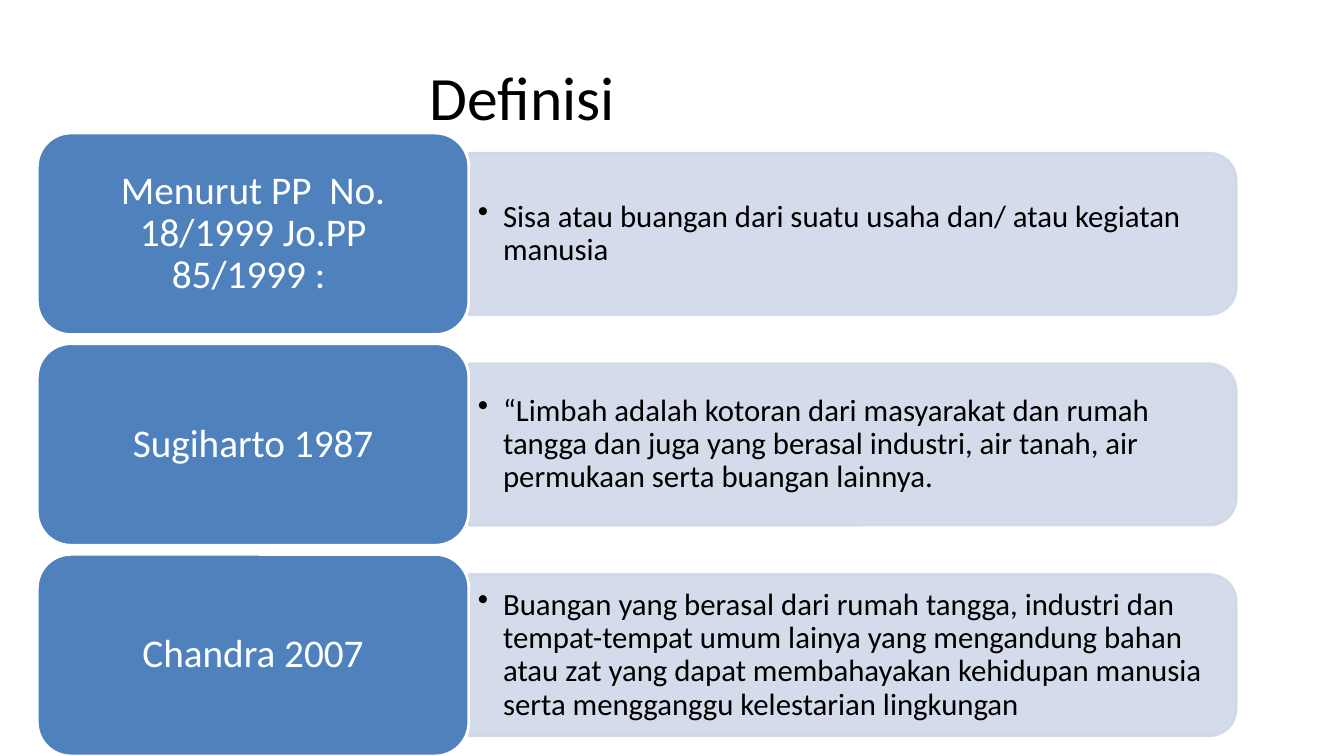
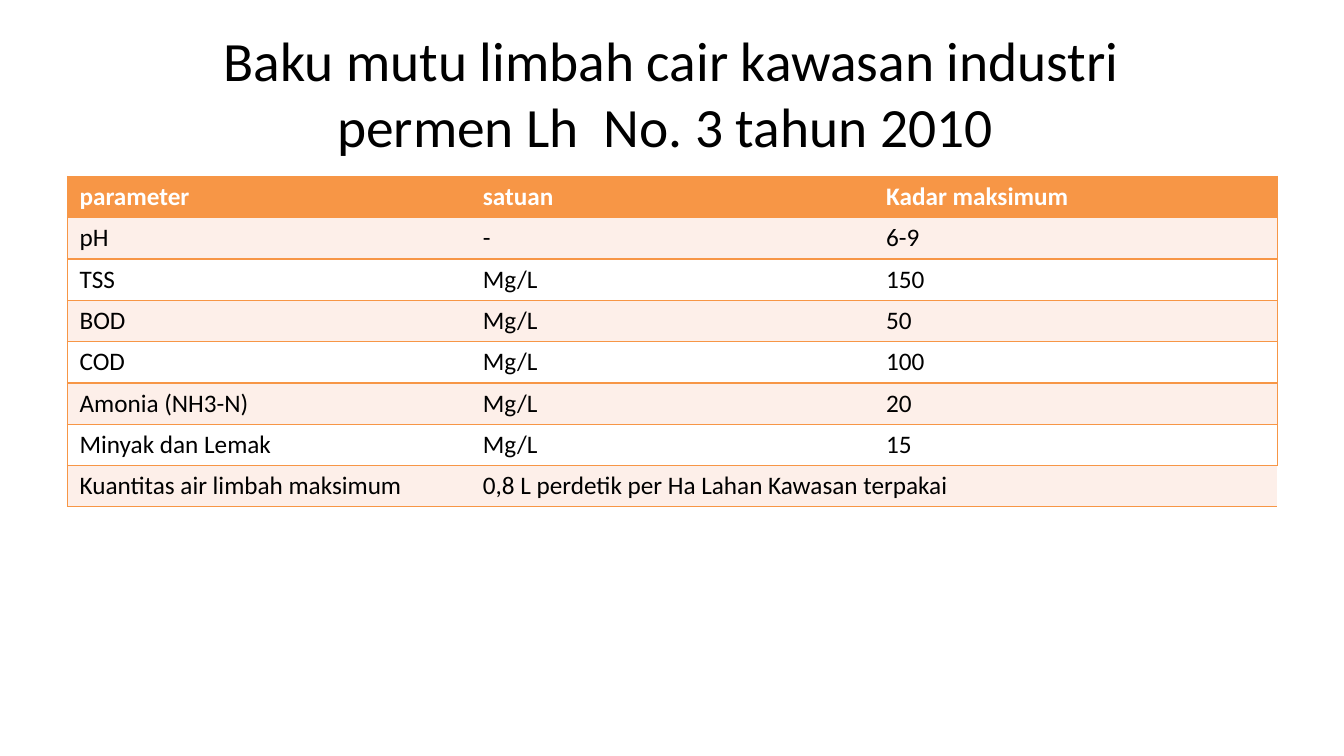
from lxml.etree import SubElement
from pptx import Presentation
from pptx.dml.color import RGBColor
from pptx.enum.shapes import MSO_SHAPE
from pptx.enum.text import MSO_ANCHOR, MSO_AUTO_SIZE, PP_ALIGN
from pptx.oxml.ns import qn
from pptx.util import Inches, Pt

BLACK = RGBColor(0x00, 0x00, 0x00)
WHITE = RGBColor(0xFF, 0xFF, 0xFF)
BLUE = RGBColor(0x4F, 0x81, 0xBD)
PALE_BLUE = RGBColor(0xD0, 0xD8, 0xE8)
ORANGE = RGBColor(0xF7, 0x96, 0x46)
PALE_ORANGE = RGBColor(0xFD, 0xEF, 0xE9)

FONT = "Calibri"
TITLE_ONLY = 5

# Geometry of the definition rows, in inches
ROW_TOP, ROW_PITCH = 1.32, 2.09
HEADING_LEFT, HEADING_WIDTH, HEADING_HEIGHT = 0.37, 4.28, 2
PANEL_WIDTH, PANEL_HEIGHT = 7.61, 1.6
PANEL_LEFT = HEADING_LEFT + HEADING_WIDTH
PANEL_OFFSET = (HEADING_HEIGHT - PANEL_HEIGHT) / 2

DEFINITIONS = [
    ("Menurut PP  No. 18/1999 Jo.PP 85/1999 : ",
     "Sisa atau buangan dari suatu usaha dan/ atau kegiatan manusia"),
    ("Sugiharto 1987",
     "“Limbah adalah kotoran dari masyarakat dan rumah tangga dan juga yang "
     "berasal industri, air tanah, air permukaan serta buangan lainnya."),
    ("Chandra 2007",
     "Buangan yang berasal dari rumah tangga, industri dan tempat-tempat umum "
     "lainya yang mengandung bahan atau zat yang dapat membahayakan kehidupan "
     "manusia serta mengganggu kelestarian lingkungan"),
]

QUALITY_LIMITS = [
    ("parameter", "satuan", "Kadar maksimum"),
    ("pH", "-", "6-9"),
    ("TSS", "Mg/L", "150"),
    ("BOD", "Mg/L", "50"),
    ("COD", "Mg/L", "100"),
    ("Amonia (NH3-N)", "Mg/L", "20"),
    ("Minyak dan Lemak", "Mg/L", "15"),
    ("Kuantitas air limbah maksimum",
     "0,8 L perdetik per Ha Lahan Kawasan terpakai", ""),
]


def write_text(frame, text, size=18, color=BLACK, bold=False, align=PP_ALIGN.LEFT,
               anchor=MSO_ANCHOR.MIDDLE, line_spacing=None, margins=None, bullet=False):
    """Fill a text frame with one formatted paragraph."""
    frame.text = text
    frame.word_wrap = True
    frame.auto_size = MSO_AUTO_SIZE.NONE
    frame.vertical_anchor = anchor
    if margins:
        frame.margin_left = frame.margin_right = Inches(margins[0])
        frame.margin_top = frame.margin_bottom = Inches(margins[1])
    paragraph = frame.paragraphs[0]
    paragraph.alignment = align
    if line_spacing:
        paragraph.line_spacing = line_spacing
    if bullet:
        properties = paragraph._p.get_or_add_pPr()
        properties.set("marL", str(Inches(0.25)))
        properties.set("indent", str(-Inches(0.25)))
        SubElement(properties, qn("a:buChar"), char="•")
    font = paragraph.font
    font.name, font.size, font.bold = FONT, Pt(size), bold
    font.color.rgb = color


class Deck:
    """Holds the presentation, its style and the current slide."""

    def __init__(self):
        self.presentation = Presentation()
        self.presentation.slide_width = Inches(13.33)
        self.presentation.slide_height = Inches(7.5)
        self.slide = None

    def add_slide(self, title, left, top, size):
        layout = self.presentation.slide_layouts[TITLE_ONLY]
        self.slide = self.presentation.slides.add_slide(layout)
        shape = self.slide.shapes.title
        shape.left, shape.top = Inches(left), Inches(top)
        shape.width, shape.height = Inches(10), Inches(1.25)
        write_text(shape.text_frame, title, size=size, align=PP_ALIGN.CENTER)

    def add_box(self, kind, left, top, width, height, fill, line, opacity=100):
        shape = self.slide.shapes.add_shape(
            kind, Inches(left), Inches(top), Inches(width), Inches(height))
        shape.shadow.inherit = False
        shape.fill.solid()
        shape.fill.fore_color.rgb = fill
        shape.line.color.rgb = line
        shape.line.width = Pt(2)
        if opacity < 100:
            for color in shape._element.spPr.iter(qn("a:srgbClr")):
                SubElement(color, qn("a:alpha"), val=str(opacity * 1000))
        return shape

    def add_panel(self, top, text):
        # A tall shape turned by 90 degrees has its rounded side on the right
        turn = (PANEL_WIDTH - PANEL_HEIGHT) / 2
        panel = self.add_box(MSO_SHAPE.ROUND_2_SAME_RECTANGLE, PANEL_LEFT + turn, top - turn,
                             PANEL_HEIGHT, PANEL_WIDTH, PALE_BLUE, PALE_BLUE, opacity=90)
        panel.rotation = 90
        inset = 0.08
        text_box = self.slide.shapes.add_textbox(
            Inches(PANEL_LEFT), Inches(top + inset),
            Inches(PANEL_WIDTH - inset), Inches(PANEL_HEIGHT - 2 * inset))
        write_text(text_box.text_frame, text, size=22, line_spacing=0.9,
                   margins=(0.09, 0.05), bullet=True)

    def add_heading(self, top, text):
        heading = self.add_box(MSO_SHAPE.ROUNDED_RECTANGLE, HEADING_LEFT, top,
                               HEADING_WIDTH, HEADING_HEIGHT, BLUE, WHITE)
        write_text(heading.text_frame, text, size=28, color=WHITE, align=PP_ALIGN.CENTER,
                   line_spacing=0.9, margins=(0.12, 0.06))

    def add_table(self, rows, left, top, column_width, row_height):
        row_count, column_count = len(rows), len(rows[0])
        table = self.slide.shapes.add_table(
            row_count, column_count, Inches(left), Inches(top),
            Inches(column_width * column_count), Inches(row_height * row_count)).table
        for column in table.columns:
            column.width = Inches(column_width)
        for row_index, values in enumerate(rows):
            table.rows[row_index].height = Inches(row_height)
            header = row_index == 0
            fill = ORANGE if header else PALE_ORANGE if row_index % 2 else WHITE
            for column_index, value in enumerate(values):
                cell = table.cell(row_index, column_index)
                self.style_cell(cell, fill, first=column_index == 0,
                                last=column_index == column_count - 1)
                write_text(cell.text_frame, value, color=WHITE if header else BLACK,
                           bold=header)
                cell.vertical_anchor = MSO_ANCHOR.TOP
        return table

    def style_cell(self, cell, fill, first, last):
        cell.margin_left = cell.margin_right = Inches(0.12)
        cell.margin_top = cell.margin_bottom = Inches(0.05)
        properties = cell._tc.get_or_add_tcPr()
        for side, visible in (("L", first), ("R", last), ("T", True), ("B", True)):
            border = SubElement(properties, qn(f"a:ln{side}"), w=str(Pt(1)))
            if visible:
                solid = SubElement(border, qn("a:solidFill"))
                SubElement(solid, qn("a:srgbClr"), val=str(ORANGE))
            else:
                SubElement(border, qn("a:noFill"))
        cell.fill.solid()
        cell.fill.fore_color.rgb = fill


def main():
    deck = Deck()

    # Definitions
    deck.add_slide("Definisi ", left=0.25, top=0.33, size=44)
    for index, (source, definition) in enumerate(DEFINITIONS):
        top = ROW_TOP + index * ROW_PITCH
        deck.add_panel(top + PANEL_OFFSET, definition)
        deck.add_heading(top, source)

    # Waste water quality limits
    deck.add_slide("Baku mutu limbah cair kawasan industri\vpermen Lh  No. 3 tahun 2010 ",
                   left=1.66, top=0.29, size=39.6)
    table = deck.add_table(QUALITY_LIMITS, left=0.67, top=1.75, column_width=4, row_height=0.41)
    last_row = len(QUALITY_LIMITS) - 1
    table.cell(last_row, 1).merge(table.cell(last_row, 2))

    deck.presentation.save("out.pptx")


if __name__ == "__main__":
    main()
